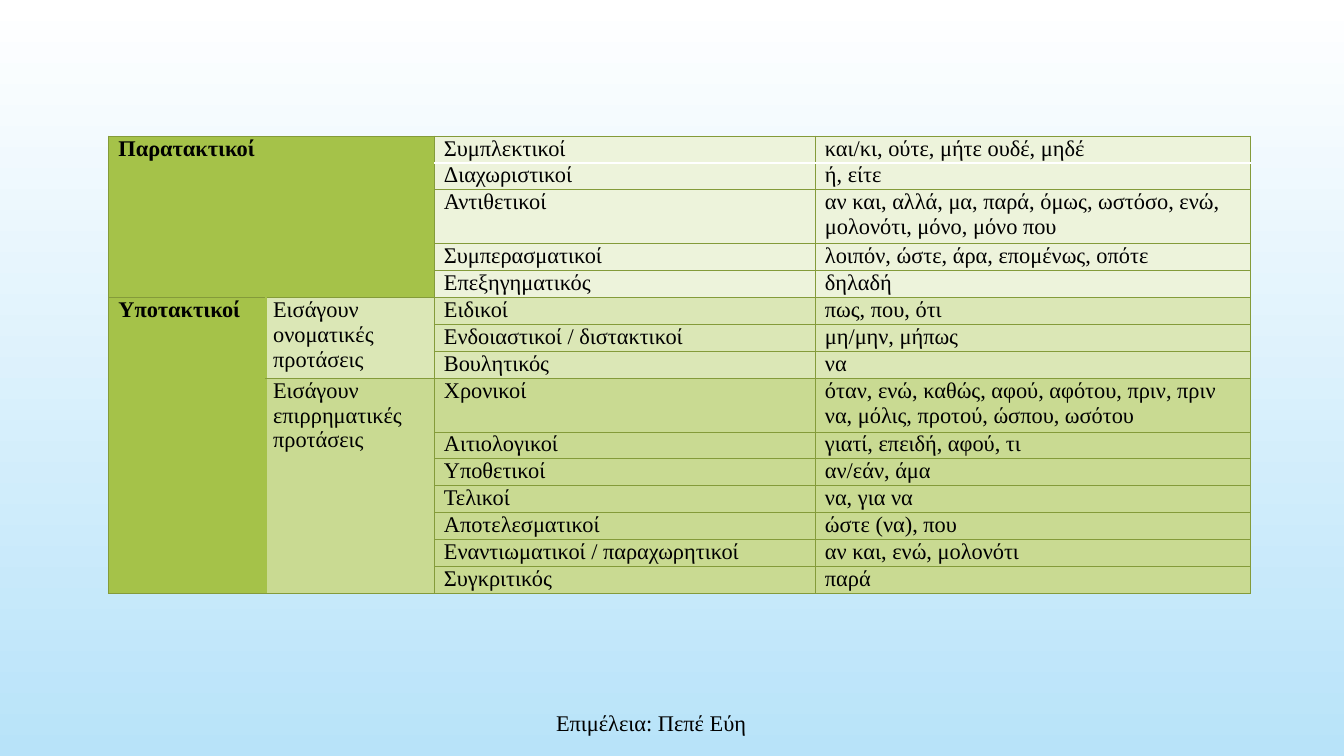
from dataclasses import dataclass

from lxml.etree import SubElement
from pptx import Presentation
from pptx.dml.color import RGBColor as Color
from pptx.enum.text import MSO_ANCHOR as Anchor, PP_ALIGN as Align
from pptx.oxml.ns import qn
from pptx.util import Pt


@dataclass(frozen=True)
class Theme:
    font: str = "Times New Roman"
    size: float = 16
    text: str = "000000"
    sky_top: str = "FFFFFF"
    sky_bottom: str = "B8E3F9"
    border: str = "849B3A"
    divider: str = "FFFFFF"
    heading: str = "A5C249"
    coordinating: str = "EDF3DB"
    nominal: str = "DBE7B6"
    adverbial: str = "C9DA92"
    thin: float = 0.75
    thick: float = 1.25


THEME = Theme()
LINE_HEIGHT = 17.8
COLUMN_WIDTHS = (112.3, 120.2, 272.2, 311)

# Each group: row fill, then (kind, conjunctions, lines of text)
GROUPS = (
    (THEME.coordinating, (
        ("Συμπλεκτικοί", "και/κι, ούτε, μήτε ουδέ, μηδέ", 1),
        ("Διαχωριστικοί", "ή, είτε", 1),
        ("Αντιθετικοί", "αν και, αλλά, μα, παρά, όμως, ωστόσο, ενώ, "
                        "μολονότι, μόνο, μόνο που", 2),
        ("Συμπερασματικοί", "λοιπόν, ώστε, άρα, επομένως, οπότε", 1),
        ("Επεξηγηματικός", "δηλαδή", 1),
    )),
    (THEME.nominal, (
        ("Ειδικοί", "πως, που, ότι", 1),
        ("Ενδοιαστικοί / διστακτικοί", "μη/μην, μήπως", 1),
        ("Βουλητικός", "να", 1),
    )),
    (THEME.adverbial, (
        ("Χρονικοί", "όταν, ενώ, καθώς, αφού, αφότου, πριν, πριν να, "
                     "μόλις, προτού, ώσπου, ωσότου", 2),
        ("Αιτιολογικοί", "γιατί, επειδή, αφού, τι", 1),
        ("Υποθετικοί", "αν/εάν, άμα", 1),
        ("Τελικοί", "να, για να", 1),
        ("Αποτελεσματικοί", "ώστε (να), που", 1),
        ("Εναντιωματικοί / παραχωρητικοί", "αν και, ενώ, μολονότι", 1),
        ("Συγκριτικός", "παρά", 1),
    )),
)
ROWS = [(fill, *row) for fill, rows in GROUPS for row in rows]
NOMINAL_ROW = len(GROUPS[0][1])
ADVERBIAL_ROW = NOMINAL_ROW + len(GROUPS[1][1])
LAST_ROW = len(ROWS) - 1

# First row, first column, last row, last column, text, fill
HEADINGS = (
    (0, 0, NOMINAL_ROW - 1, 1, "Παρατακτικοί", THEME.heading),
    (NOMINAL_ROW, 0, LAST_ROW, 0, "Υποτακτικοί", THEME.heading),
    (NOMINAL_ROW, 1, ADVERBIAL_ROW - 1, 1,
     "Εισάγουν ονοματικές\vπροτάσεις", THEME.nominal),
    (ADVERBIAL_ROW, 1, LAST_ROW, 1,
     "Εισάγουν επιρρηματικές\vπροτάσεις", THEME.adverbial),
)


def style_text(paragraph, bold=False):
    for run in paragraph.runs:
        run.font.name = THEME.font
        run.font.size = Pt(THEME.size)
        run.font.bold = bold
        run.font.color.rgb = Color.from_string(THEME.text)


def cell_edges(row, column):
    """Colour and width of the four edges of a cell."""
    edges = dict.fromkeys("LRTB", (THEME.border, THEME.thin))
    if column >= 2 and row in (0, 1):
        edges["B" if row == 0 else "T"] = (THEME.divider, THEME.thick)
    if column <= 1 and row >= NOMINAL_ROW:
        edges["R" if column == 0 else "L"] = (THEME.heading, THEME.thick)
    return edges


def style_cell(cell, row, column, fill):
    properties = cell._tc.get_or_add_tcPr()
    for side, (color, width) in cell_edges(row, column).items():
        line = SubElement(properties, qn(f"a:ln{side}"), w=str(Pt(width)))
        solid = SubElement(line, qn("a:solidFill"))
        SubElement(solid, qn("a:srgbClr"), val=color)
    cell.fill.solid()
    cell.fill.fore_color.rgb = Color.from_string(fill)
    cell.margin_left = cell.margin_right = Pt(5)
    cell.margin_top = cell.margin_bottom = 0


def write_cell(cell, text, bold=False, indent=1.8):
    cell.text_frame.text = text
    paragraph = cell.text_frame.paragraphs[0]
    paragraph._p.get_or_add_pPr().set("marL", str(Pt(indent)))
    style_text(paragraph, bold)


def add_conjunction_table(slide, left, top, width):
    height = LINE_HEIGHT * sum(row[3] for row in ROWS)
    table = slide.shapes.add_table(len(ROWS), len(COLUMN_WIDTHS), Pt(left),
                                   Pt(top), Pt(width), Pt(height)).table
    table.first_row = table.horz_banding = False
    scale = width / sum(COLUMN_WIDTHS)
    for column, column_width in zip(table.columns, COLUMN_WIDTHS):
        column.width = Pt(column_width * scale)

    # Kinds and their conjunctions
    for index, (fill, kind, conjunctions, lines) in enumerate(ROWS):
        table.rows[index].height = Pt(LINE_HEIGHT * lines)
        for column in (2, 3):
            cell = table.cell(index, column)
            style_cell(cell, index, column, fill)
            write_cell(cell, (kind, conjunctions)[column - 2])

    # Merged headings
    for top_row, first, bottom_row, last, text, fill in HEADINGS:
        for row in range(top_row, bottom_row + 1):
            for column in range(first, last + 1):
                cell = table.cell(row, column)
                style_cell(cell, row, column, fill)
                cell.text_frame.paragraphs[0].font.size = Pt(THEME.size)
        heading = table.cell(top_row, first)
        heading.merge(table.cell(bottom_row, last))
        main = first == 0
        write_cell(heading, text, bold=main, indent=1.8 if main else 0)


def add_credit(slide, left, top, width, height):
    text_frame = slide.shapes.add_textbox(
        Pt(left), Pt(top), Pt(width), Pt(height)).text_frame
    text_frame.word_wrap = True
    text_frame.vertical_anchor = Anchor.MIDDLE
    text_frame.text = "Επιμέλεια: Πεπέ Εύη"
    paragraph = text_frame.paragraphs[0]
    paragraph.alignment = Align.CENTER
    style_text(paragraph)


def paint_background(slide):
    fill = slide.background.fill
    fill.gradient()
    fill.gradient_angle = 270
    for stop, position, color in zip(fill.gradient_stops, (0, 1),
                                     (THEME.sky_top, THEME.sky_bottom)):
        stop.position = position
        stop.color.rgb = Color.from_string(color)


def main():
    presentation = Presentation()
    presentation.slide_width, presentation.slide_height = Pt(960), Pt(540)
    slide = presentation.slides.add_slide(presentation.slide_layouts[6])
    paint_background(slide)
    add_credit(slide, 202.3, 501.8, 525.6, 28.8)
    add_conjunction_table(slide, 77.8, 97.2, 815.7)
    presentation.save("out.pptx")


if __name__ == "__main__":
    main()
